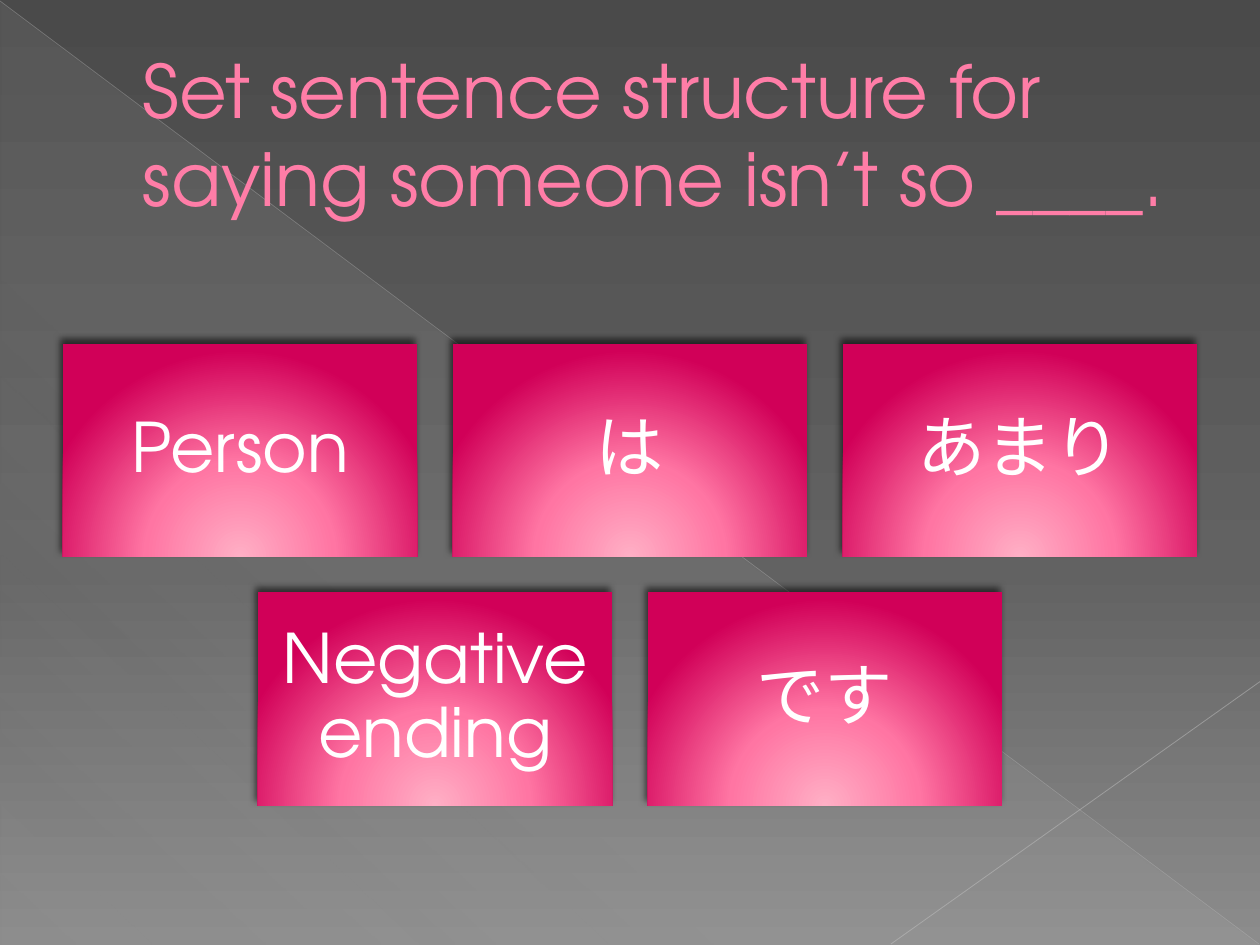
from dataclasses import dataclass

from lxml import etree
from pptx import Presentation
from pptx.dml.color import RGBColor
from pptx.enum import shapes, text
from pptx.oxml import ns
from pptx.util import Cm, Pt


@dataclass(frozen=True)
class Theme:
    font: str = "TeX Gyre Adventor"
    title_size: float = 42
    tile_size: float = 39
    title: str = "FF7DA7"
    title_outline: str = "B12761"
    tile_text: str = "FFFFFF"
    shadow: str = "000000"
    background: tuple = ((0, "4A4A4A", 100), (60, "626262", 100), (100, "8C8C8C", 100))
    triangle: tuple = ((0, "D2D2D2", 10), (70, "D2D2D2", 8), (100, "D2D2D2", 1))
    tile: tuple = ((0, "FFAFC5", 100), (46, "FF75A3", 100), (100, "D10058", 100))


THEME = Theme()
TITLE = "Set sentence structure for saying someone isn’t so ____."
TILE_ROWS = (("Person", "は", "あまり"), ("Negative ending", "です"))


def add_element(parent, tag, **attributes):
    element = etree.SubElement(parent, ns.qn(tag))
    for name, value in attributes.items():
        element.set(name, str(value))
    return element


def add_color(parent, color, opacity=100):
    element = add_element(parent, "a:srgbClr", val=color)
    if opacity < 100:
        add_element(element, "a:alpha", val=opacity * 1000)


def set_gradient(properties, stops, angle=None):
    gradient = etree.Element(ns.qn("a:gradFill"), rotWithShape="1")
    stop_list = add_element(gradient, "a:gsLst")
    for position, color, opacity in stops:
        add_color(add_element(stop_list, "a:gs", pos=position * 1000), color, opacity)
    if angle is None:
        circle = add_element(gradient, "a:path", path="circle")
        add_element(circle, "a:fillToRect", l=50000, t=155000, r=50000, b=-55000)
    else:
        add_element(gradient, "a:lin", ang=angle * 60000, scaled=0)
    properties.replace(properties.find(ns.qn("a:solidFill")), gradient)


def set_font(paragraph, size, color):
    paragraph.font.name = THEME.font
    paragraph.font.size = Pt(size)
    paragraph.font.color.rgb = RGBColor.from_string(color)


def add_box(slide, kind, box, stops, angle=None):
    shape = slide.shapes.add_shape(kind, *map(Cm, box))
    shape.shadow.inherit = False
    shape.line.fill.background()
    shape.fill.solid()
    set_gradient(shape._element.spPr, stops, angle)
    return shape


def add_thin_line(slide, start, end, color, width, opacity):
    line = slide.shapes.add_connector(
        shapes.MSO_CONNECTOR.STRAIGHT, *map(Cm, (*start, *end)))
    line.line.width = Pt(width)
    line.line.color.rgb = RGBColor.from_string(color)
    properties = line._element.spPr
    add_element(properties.find(".//" + ns.qn("a:srgbClr")), "a:alpha", val=opacity * 1000)
    add_element(properties, "a:effectLst")


def add_backdrop(slide, box):
    left, top, width, height = box
    right, bottom = left + width, top + height
    slide.background.fill.solid()
    set_gradient(slide._element.find(".//" + ns.qn("p:bgPr")), THEME.background, 90)
    add_box(slide, shapes.MSO_SHAPE.RIGHT_TRIANGLE,
            (left + 0.02, top + 0.04, width - 0.04, height - 0.05), THEME.triangle, 133)
    add_thin_line(slide, (left, top + 0.02), (right - 0.02, bottom - 0.02), "BFBFBF", 0.39, 35)
    add_thin_line(slide, (right, top + 13.74), (left + 17.96, bottom - 0.02), "C6C6C6", 0.47, 45)


def place_title(slide, box):
    title = slide.shapes.title
    slide.shapes._spTree.append(title._element)
    title.left, title.top, title.width, title.height = map(Cm, box)
    frame = title.text_frame
    frame.text = TITLE
    frame.word_wrap = True
    frame.auto_size = text.MSO_AUTO_SIZE.NONE
    frame.vertical_anchor = text.MSO_ANCHOR.MIDDLE
    paragraph = frame.paragraphs[0]
    paragraph.alignment = text.PP_ALIGN.LEFT
    set_font(paragraph, THEME.title_size, THEME.title)
    properties = paragraph._p.get_or_add_pPr()
    properties.set("marL", str(Cm(1.35)))
    properties.set("indent", "0")
    outline = etree.Element(ns.qn("a:ln"), w=str(Pt(0.5)))
    add_color(add_element(outline, "a:solidFill"), THEME.title_outline)
    properties.find(ns.qn("a:defRPr")).insert(0, outline)


def add_tile(slide, box, label):
    tile = add_box(slide, shapes.MSO_SHAPE.RECTANGLE, box, THEME.tile)
    effects = tile._element.spPr.find(ns.qn("a:effectLst"))
    shadow = add_element(effects, "a:outerShdw", blurRad=Pt(4), dist=Pt(3),
                         dir=245 * 60000, rotWithShape=0)
    add_color(shadow, THEME.shadow, 60)
    frame = tile.text_frame
    frame.text = label
    frame.word_wrap = True
    frame.vertical_anchor = text.MSO_ANCHOR.MIDDLE
    frame.margin_left = frame.margin_right = Cm(0.41)
    frame.margin_top = frame.margin_bottom = Cm(0.41)
    paragraph = frame.paragraphs[0]
    paragraph.alignment = text.PP_ALIGN.CENTER
    paragraph.line_spacing = 0.9
    set_font(paragraph, THEME.tile_size, THEME.tile_text)


def add_tile_grid(slide, box, rows, gap=0.72):
    left, top, width, height = box
    columns = max(map(len, rows))
    tile_width = (width - gap * (columns - 1)) / columns
    tile_height = (height - gap * (len(rows) - 1)) / len(rows)
    for row, labels in enumerate(rows):
        row_width = len(labels) * (tile_width + gap) - gap
        row_left = left + (width - row_width) / 2
        for column, label in enumerate(labels):
            add_tile(slide, (row_left + column * (tile_width + gap),
                             top + row * (tile_height + gap),
                             tile_width, tile_height), label)


def main():
    presentation = Presentation()
    presentation.slide_width, presentation.slide_height = Cm(25.4), Cm(19.05)
    slide = presentation.slides.add_slide(presentation.slide_layouts[5])
    add_backdrop(slide, (0, 0, 25.4, 19.05))
    place_title(slide, (1.27, 0.74, 22.86, 3.89))
    add_tile_grid(slide, (1.27, 6.93, 22.86, 9.3), TILE_ROWS)
    presentation.save("out.pptx")


if __name__ == "__main__":
    main()
